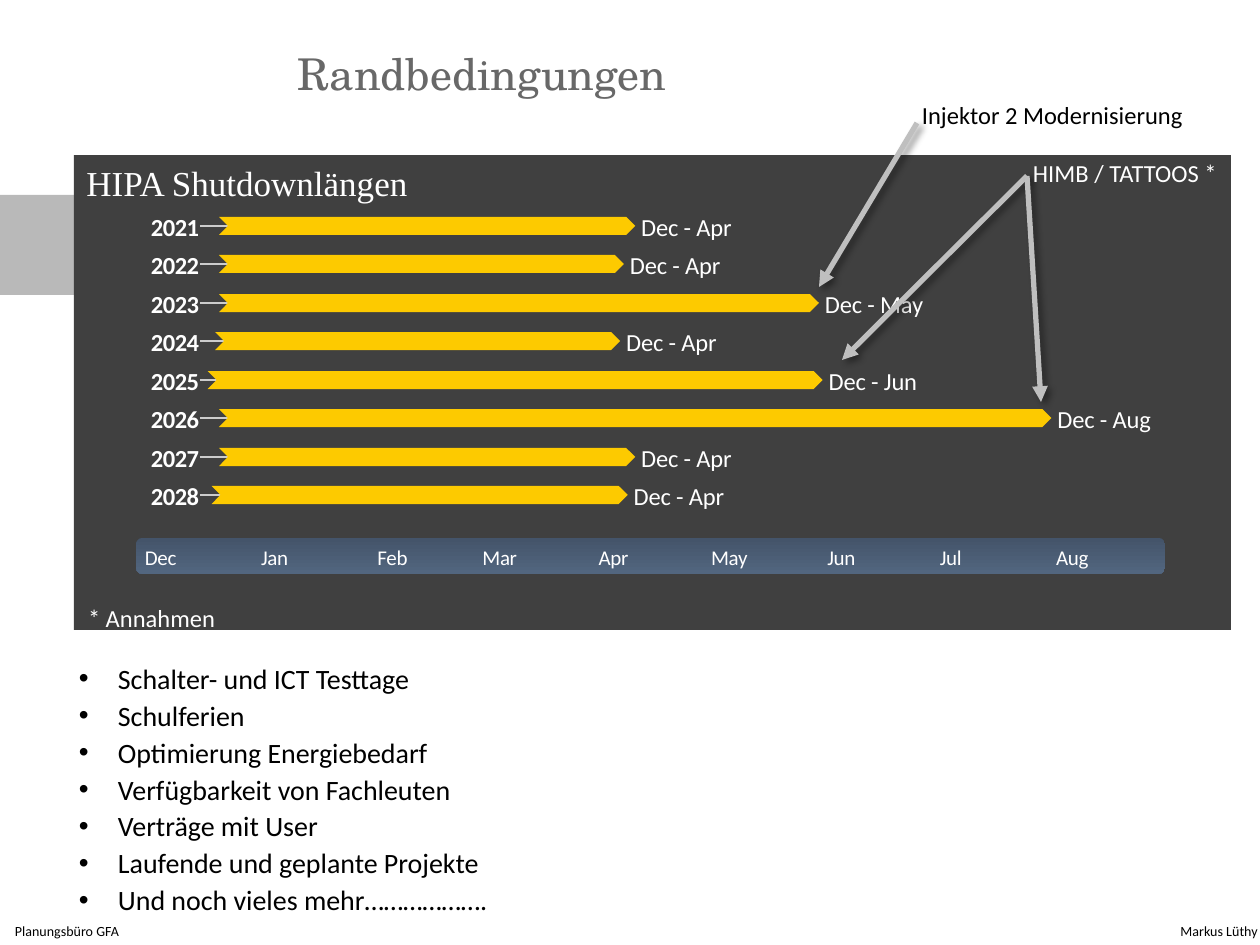
from dataclasses import dataclass
from itertools import accumulate

from lxml import etree
from pptx import Presentation
from pptx.dml.color import RGBColor
from pptx.enum.shapes import MSO_CONNECTOR, MSO_SHAPE
from pptx.enum.text import MSO_ANCHOR, PP_ALIGN
from pptx.oxml.ns import qn
from pptx.util import Emu, Pt

RECTANGLE = MSO_SHAPE.RECTANGLE
ROUNDED = MSO_SHAPE.ROUNDED_RECTANGLE
CHEVRON = MSO_SHAPE.CHEVRON
STRAIGHT = MSO_CONNECTOR.STRAIGHT
TOP, MIDDLE = MSO_ANCHOR.TOP, MSO_ANCHOR.MIDDLE
LEFT = PP_ALIGN.LEFT

PX_PER_INCH = 126
SLIDE_WIDTH, SLIDE_HEIGHT = 1260, 945


@dataclass(frozen=True)
class Theme:
    black: str = "000000"
    white: str = "FFFFFF"
    title: str = "686868"
    accent: str = "B9B9B9"
    panel: str = "404040"
    bar: str = "FDCA00"
    guide: str = "CCCCCC"
    arrow: str = "BFBFBF"
    axis_top: str = "44546A"
    axis_bottom: str = "52667F"
    body_font: str = "Calibri"
    panel_font: str = "Times New Roman"
    title_font: str = "TeX Gyre Schola"
    title_size: int = 25
    panel_size: int = 20
    list_size: int = 16
    label_size: int = 14
    month_size: int = 12
    footer_size: int = 8


def px(length):
    return Emu(round(length * 914400 / PX_PER_INCH))


def color(value):
    return RGBColor.from_string(value)


def add_element(parent, tag, **attributes):
    values = {name: str(value) for name, value in attributes.items()}
    return etree.SubElement(parent, qn(tag), values)


class SlideBuilder:
    def __init__(self, slide, theme):
        self.slide = slide
        self.theme = theme

    def shape(self, kind, left, top, width, height, fill):
        """Add a borderless shape; a pair of colours gives a top-down gradient."""
        shape = self.slide.shapes.add_shape(kind, px(left), px(top), px(width), px(height))
        shape.shadow.inherit = False
        shape.line.fill.background()
        if isinstance(fill, tuple):
            shape.fill.gradient()
            shape.fill.gradient_angle = 270
            for stop, position, value in zip(shape.fill.gradient_stops, (0, 1), fill):
                stop.position = position
                stop.color.rgb = color(value)
        else:
            shape.fill.solid()
            shape.fill.fore_color.rgb = color(fill)
        return shape

    def style(self, paragraph, size, value, font=None, bold=False, tracking=0):
        paragraph.alignment = LEFT
        paragraph.font.name = font or self.theme.body_font
        paragraph.font.size = Pt(size)
        paragraph.font.bold = bold
        paragraph.font.color.rgb = color(value)
        if tracking:
            properties = paragraph._p.get_or_add_pPr().get_or_add_defRPr()
            properties.set("spc", str(tracking))

    def frame(self, left, top, width, height, anchor=TOP, wrap=True):
        box = self.slide.shapes.add_textbox(px(left), px(top), px(width), px(height))
        frame = box.text_frame
        frame.margin_left = frame.margin_right = frame.margin_top = frame.margin_bottom = 0
        frame.vertical_anchor = anchor
        frame.word_wrap = wrap
        return frame

    def label(self, text, left, top, width, height, size, value, anchor=TOP, **style):
        frame = self.frame(left, top, width, height, anchor, wrap=False)
        paragraph = frame.paragraphs[0]
        paragraph.text = text
        paragraph.line_spacing = 1.1
        self.style(paragraph, size, value, **style)
        return paragraph

    def heading(self, text, left, top, width, height):
        paragraph = self.frame(left, top, width, height).paragraphs[0]
        paragraph.text = text
        self.style(paragraph, self.theme.title_size, self.theme.title, self.theme.title_font)

    def panel(self, text, left, top, width, height):
        shape = self.shape(RECTANGLE, left, top, width, height, self.theme.panel)
        shape.text_frame.vertical_anchor = TOP
        paragraph = shape.text_frame.paragraphs[0]
        paragraph.text = text
        self.style(paragraph, self.theme.panel_size, self.theme.white, self.theme.panel_font)

    def bullets(self, items, left, top, width, height, indent):
        frame = self.frame(left, top, width, height)
        for index, item in enumerate(items):
            paragraph = frame.add_paragraph() if index else frame.paragraphs[0]
            paragraph.text = item
            paragraph.line_spacing = 1.1
            properties = paragraph._p.get_or_add_pPr()
            properties.set("marL", str(px(indent)))
            properties.set("indent", str(-px(indent)))
            bullet_color = add_element(properties, "a:buClr")
            add_element(bullet_color, "a:srgbClr", val=self.theme.black)
            add_element(properties, "a:buFont", typeface="Arial")
            add_element(properties, "a:buChar", char="•")
            self.style(paragraph, self.theme.list_size, self.theme.black)

    def footer(self, left_text, right_text, left, top, width, height):
        frame = self.frame(left, top, width, height)
        paragraph = frame.paragraphs[0]
        paragraph.text = f"{left_text}\t{right_text}"
        paragraph.line_spacing = 1.1
        tabs = add_element(paragraph._p.get_or_add_pPr(), "a:tabLst")
        add_element(tabs, "a:tab", pos=px(width - 2), algn="r")
        self.style(paragraph, self.theme.footer_size, self.theme.black)

    def line(self, start, end, value, weight):
        """Add a plain line and return it with its empty effect list."""
        line = self.slide.shapes.add_connector(STRAIGHT, *map(px, start + end))
        line.line.color.rgb = color(value)
        line.line.width = Pt(weight)
        return line, add_element(line._element.spPr, "a:effectLst")

    def arrow(self, start, end):
        line, effects = self.line(start, end, self.theme.arrow, 3)
        add_element(line.line._get_or_add_ln(), "a:tailEnd", type="triangle")
        shadow = add_element(effects, "a:outerShdw", blurRad=Pt(4), dist=Pt(3),
                             dir=45 * 60000, algn="tl", rotWithShape=0)
        shadow_color = add_element(shadow, "a:srgbClr", val=self.theme.black)
        add_element(shadow_color, "a:alpha", val=40000)


DAY = 3.75
AXIS_START = 144
MONTHS = ("Dec", "Jan", "Feb", "Mar", "Apr", "May", "Jun", "Jul", "Aug")
MONTH_DAYS = (31, 31, 28, 31, 30, 31, 30, 31)

# Year, first day and length in days, period
SHUTDOWNS = (
    ("2021", 20, 111, "Dec - Apr"),
    ("2022", 20, 108, "Dec - Apr"),
    ("2023", 20, 160, "Dec - May"),
    ("2024", 19, 108, "Dec - Apr"),
    ("2025", 17, 164, "Dec - Jun"),
    ("2026", 20, 222, "Dec - Aug"),
    ("2027", 20, 111, "Dec - Apr"),
    ("2028", 18, 111, "Dec - Apr"),
)
CONSTRAINTS = (
    "Schalter- und ICT Testtage",
    "Schulferien",
    "Optimierung Energiebedarf",
    "Verfügbarkeit von Fachleuten",
    "Verträge mit User",
    "Laufende und geplante Projekte",
    "Und noch vieles mehr……………….",
)


def add_timeline(builder):
    theme = builder.theme
    for row, (year, first_day, days, period) in enumerate(SHUTDOWNS):
        top = 217 + row * 77 // 2
        left, width = AXIS_START + first_day * DAY, days * DAY
        builder.line((200, top + 9), (left + 113, top + 9), theme.guide, 0.75)
        builder.shape(CHEVRON, left, top, width, 18, theme.bar)
        builder.label(period, left + width + 6, top - 8, 140, 33, theme.label_size,
                      theme.white, MIDDLE, tracking=-10)
        builder.label(year, 151, top - 7, 50, 30, theme.label_size,
                      theme.white, MIDDLE, bold=True, tracking=-30)

    builder.shape(ROUNDED, 136, 538, 1029, 36, (theme.axis_top, theme.axis_bottom))
    for month, day in zip(MONTHS, accumulate(MONTH_DAYS, initial=0)):
        builder.label(month, AXIS_START + 1 + day * DAY, 544, 38, 24, theme.month_size,
                      theme.white, MIDDLE, tracking=-20)


def main():
    presentation = Presentation()
    presentation.slide_width, presentation.slide_height = px(SLIDE_WIDTH), px(SLIDE_HEIGHT)
    slide = presentation.slides.add_slide(presentation.slide_layouts[6])
    theme = Theme()
    builder = SlideBuilder(slide, theme)

    builder.shape(RECTANGLE, 0, 195, 99, 100, theme.accent)
    builder.footer("Planungsbüro GFA", "Markus Lüthy", 15, 921, 1245, 24)
    builder.panel("HIPA Shutdownlängen", 74, 155, 1157, 475)
    builder.heading("Randbedingungen", 298, 47, 900, 60)
    add_timeline(builder)

    builder.arrow((917, 123), (819, 287))
    builder.label("Injektor 2 Modernisierung", 922, 97, 280, 44, theme.label_size, theme.black)
    for target in ((842, 360), (1041, 402)):
        builder.arrow((1027, 176), target)
    builder.label("HIMB / TATTOOS *", 1033, 155, 190, 44, theme.label_size, theme.white)
    builder.label("* Annahmen", 88, 600, 1052, 60, theme.label_size, theme.white)
    builder.bullets(CONSTRAINTS, 79, 658, 1137, 260, indent=39)
    presentation.save("out.pptx")


if __name__ == "__main__":
    main()
